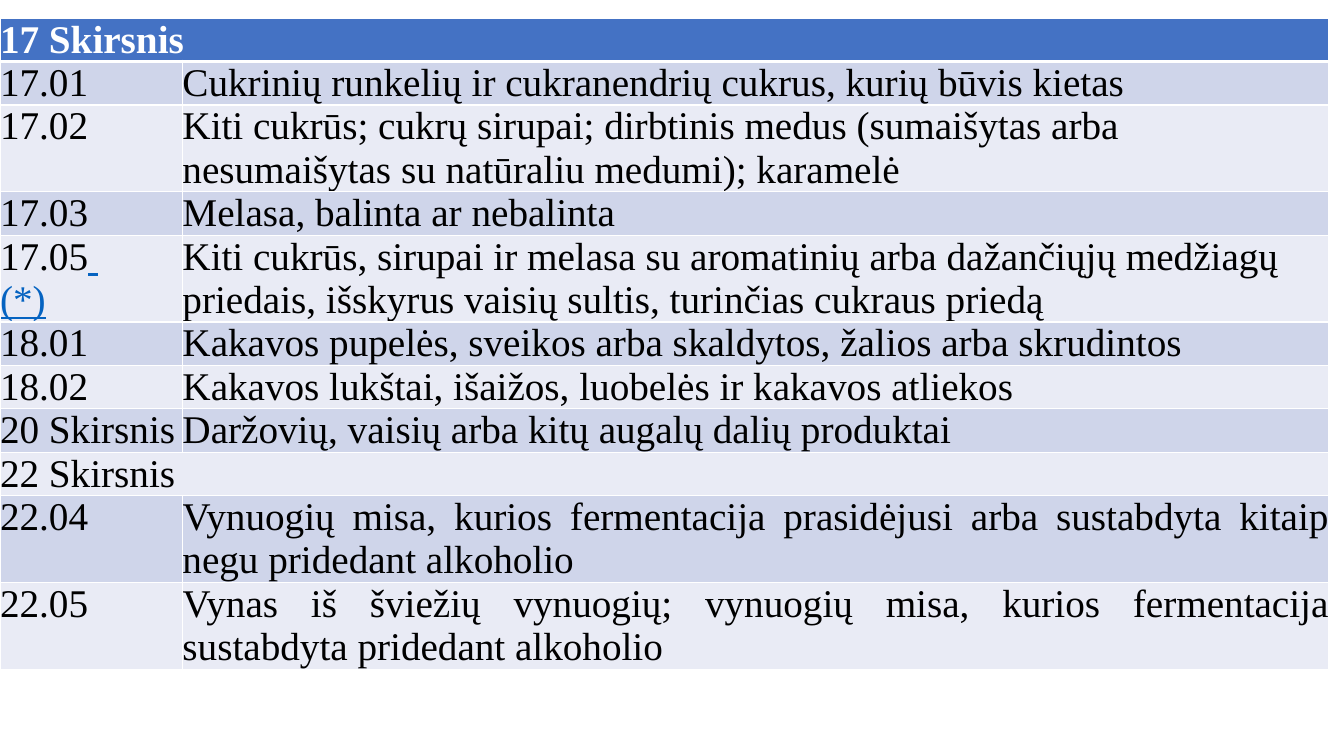
from lxml import etree
from pptx import Presentation
from pptx import util as u
from pptx.dml.color import RGBColor
from pptx.enum import text
from pptx.oxml import ns

WHITE = RGBColor(0xFF, 0xFF, 0xFF)
BLACK = RGBColor(0x00, 0x00, 0x00)
HEADER_BLUE = RGBColor(0x44, 0x72, 0xC4)
LINK_BLUE = RGBColor(0x05, 0x63, 0xC1)
BANDS = (RGBColor(0xE9, 0xEB, 0xF5), RGBColor(0xCF, 0xD5, 0xEA))

LEFT = text.PP_ALIGN.LEFT
JUSTIFY = text.PP_ALIGN.JUSTIFY
LINK = {"underline": True, "color": LINK_BLUE}

# A code cell is a list of paragraphs, each a list of (words, format) spans.
FOOTNOTED_CODE = [[("17.05", {}), (" ", LINK)], [("(*)", LINK), (" ", {})]]

# Code, description (None: the code spans the row), alignment of the description
ROWS = [
    ("17 Skirsnis", None, JUSTIFY),
    ("17.01", "Cukrinių runkelių ir cukranendrių cukrus, kurių būvis kietas", LEFT),
    ("17.02", "Kiti cukrūs; cukrų sirupai; dirbtinis medus (sumaišytas arba "
              "nesumaišytas su natūraliu medumi); karamelė", LEFT),
    ("17.03", "Melasa, balinta ar nebalinta", LEFT),
    (FOOTNOTED_CODE, "Kiti cukrūs, sirupai ir melasa su aromatinių arba dažančiųjų "
                     "medžiagų priedais, išskyrus vaisių sultis, turinčias cukraus priedą",
     LEFT),
    ("18.01", "Kakavos pupelės, sveikos arba skaldytos, žalios arba skrudintos", JUSTIFY),
    ("18.02", "Kakavos lukštai, išaižos, luobelės ir kakavos atliekos", JUSTIFY),
    ("20 Skirsnis", "Daržovių, vaisių arba kitų augalų dalių produktai", JUSTIFY),
    ("22 Skirsnis", None, JUSTIFY),
    ("22.04", "Vynuogių misa, kurios fermentacija prasidėjusi arba sustabdyta kitaip "
              "negu pridedant alkoholio", JUSTIFY),
    ("22.05", "Vynas iš šviežių vynuogių; vynuogių misa, kurios fermentacija "
              "sustabdyta pridedant alkoholio", JUSTIFY),
]


class TariffPage:
    """Style and current slide; lengths are percentages of the slide's size."""

    font = {"name": "Times New Roman", "size": u.Pt(28), "bold": False,
            "underline": False, "color": BLACK}
    frame = {"margin_left": 0, "margin_right": 0, "margin_top": 0, "margin_bottom": 0}

    def __init__(self, deck):
        self.deck = deck
        self.page = deck.slides.add_slide(deck.slide_layouts[6])

    def across(self, percent):
        return round(self.deck.slide_width * percent / 100)

    def down(self, percent):
        return round(self.deck.slide_height * percent / 100)

    def table(self, rows, left, top, height, columns, row_height):
        box = self.page.shapes.add_table(
            len(rows), len(columns), self.across(left), self.down(top),
            self.across(sum(columns)), self.down(row_height * len(rows)))
        table = box.table
        for column, width in zip(table.columns, columns):
            column.width = self.across(width)
        for index, (code, description, align) in enumerate(rows):
            table.rows[index].height = self.down(row_height)
            header = index == 0
            style = {"bold": True, "color": WHITE} if header else {}
            cells = list(table.rows[index].cells)
            for cell in cells:
                self.borders(cell, bottom=3 if header else 1, top=3 if index == 1 else 1)
                cell.fill.solid()
                cell.fill.fore_color.rgb = HEADER_BLUE if header else BANDS[index % 2]
            self.cell_text(cells[0], code, JUSTIFY, style)
            if description is None:
                cells[0].merge(cells[1])
                cells[0].vertical_anchor = text.MSO_ANCHOR.MIDDLE
            else:
                self.cell_text(cells[1], description, align, style)
        box.height = self.down(height)

    def borders(self, cell, top, bottom):
        properties = cell._tc.get_or_add_tcPr()
        for side, points in {"L": 1, "R": 1, "T": top, "B": bottom}.items():
            line = etree.SubElement(properties, ns.qn(f"a:ln{side}"), w=str(u.Pt(points)))
            fill = etree.SubElement(line, ns.qn("a:solidFill"))
            etree.SubElement(fill, ns.qn("a:srgbClr"), val=str(WHITE))

    def cell_text(self, cell, content, align, style):
        """Fill a cell from plain words or from paragraphs of formatted spans."""
        for name, value in self.frame.items():
            setattr(cell, name, value)
        paragraphs = [[(content, {})]] if isinstance(content, str) else content
        for index, spans in enumerate(paragraphs):
            para = cell.text_frame.add_paragraph() if index else cell.text_frame.paragraphs[0]
            para.alignment = align
            for words, extra in spans:
                span = para.add_run()
                span.text = words
                for name, value in {**self.font, **style, **extra}.items():
                    if name == "color":
                        span.font.color.rgb = value
                    else:
                        setattr(span.font, name, value)


def main():
    deck = Presentation()
    deck.slide_width, deck.slide_height = u.Inches(13.33), u.Inches(7.5)
    TariffPage(deck).table(ROWS, left=0, top=2.4, height=93.33,
                           columns=(13.58, 85.3), row_height=4.93)
    deck.save("out.pptx")


if __name__ == "__main__":
    main()
